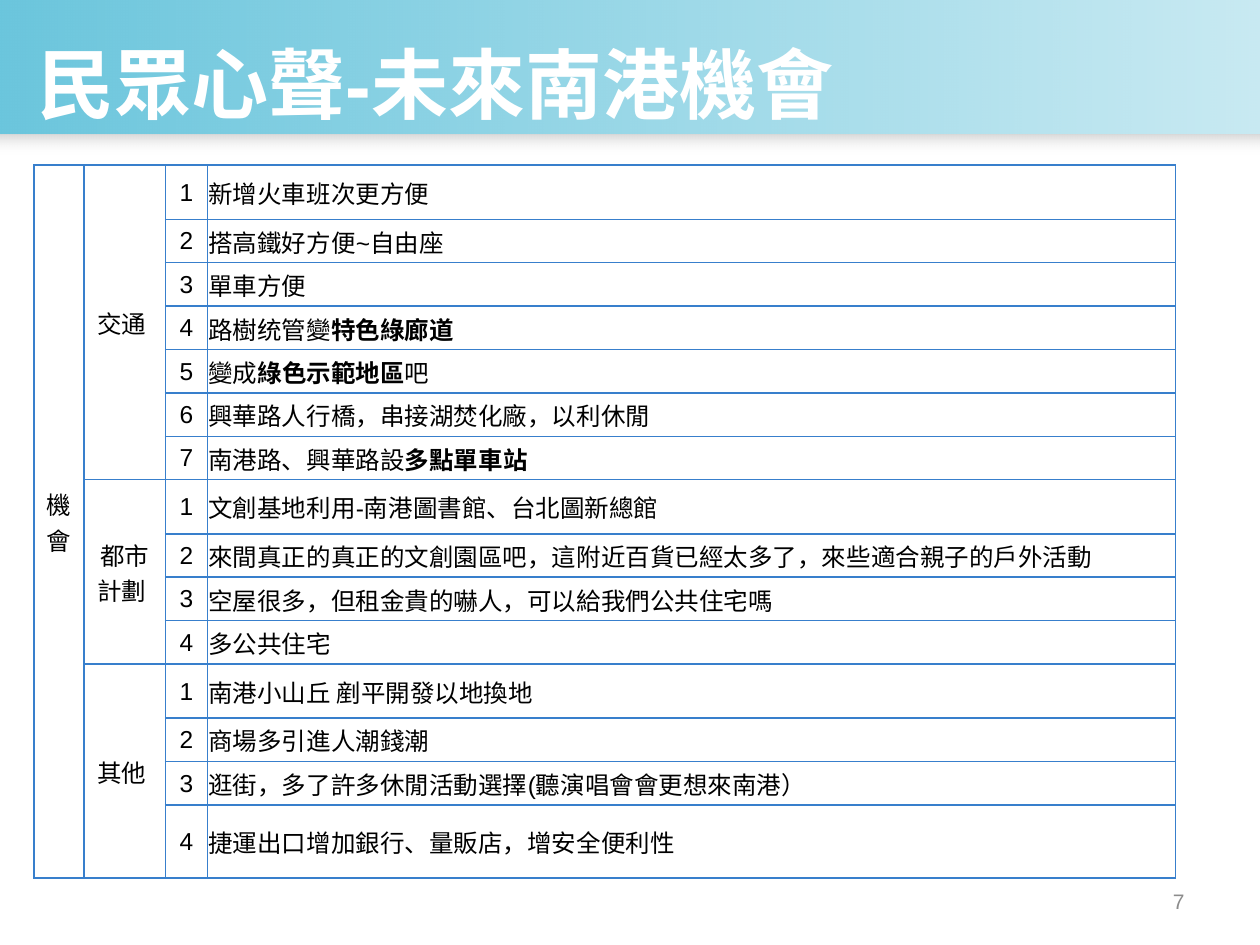
import lxml.etree
import pptx
import pptx.dml.color
import pptx.enum.shapes
import pptx.enum.text
import pptx.oxml.ns
import pptx.util

Cm, Pt = pptx.util.Cm, pptx.util.Pt
RGB = pptx.dml.color.RGBColor.from_string
ALIGN = pptx.enum.text.PP_ALIGN
MIDDLE = pptx.enum.text.MSO_ANCHOR.MIDDLE
qn = pptx.oxml.ns.qn

COLORS = {"banner": "6BC6DD", "white": "FFFFFF", "shade": "D9D9D9",
          "border": "387FCC", "text": "000000", "number": "8C8C8C"}

# Text between asterisks is bold
GROUPS = [
    ("交通 ", ["新增火車班次更方便", "搭高鐵好方便~自由座", "單車方便",
             "路樹统管變*特色綠廊道*", "變成*綠色示範地區*吧",
             "興華路人行橋，串接湖焚化廠，以利休閒",
             "南港路、興華路設*多點單車站*"]),
    ("都市\n計劃 ", ["文創基地利用-南港圖書館、台北圖新總館",
                 "來間真正的真正的文創園區吧，這附近百貨已經太多了，來些適合親子的戶外活動",
                 "空屋很多，但租金貴的嚇人，可以給我們公共住宅嗎", "多公共住宅"]),
    ("其他 ", ["南港小山丘 剷平開發以地換地", "商場多引進人潮錢潮",
             "逛街，多了許多休閒活動選擇(聽演唱會會更想來南港）",
             "捷運出口增加銀行、量販店，增安全便利性"]),
]
COL_WIDTHS = [1, 1.65, 0.84, 19.52]
ROW_HEIGHT, GROUP_TOP_HEIGHT, LAST_HEIGHT = 0.875, 1.09, 1.47


def write(tf, text, size, color, align, bold=False):
    """Fill a text frame: one paragraph per line, asterisks toggle bold."""
    for i, line in enumerate(text.split("\n")):
        p = tf.add_paragraph() if i else tf.paragraphs[0]
        p.alignment = align
        for j, part in enumerate(line.split("*")):
            if part:
                r = p.add_run()
                r.text = part
                r.font.color.rgb = RGB(COLORS[color])
                style = {"name": "Arial", "size": Pt(size), "bold": bold or j % 2 == 1}
                for key, value in style.items():
                    setattr(r.font, key, value)


def add_border(cell):
    tcPr = cell._tc.get_or_add_tcPr()
    for i, side in enumerate(("lnL", "lnR", "lnT", "lnB")):
        ln = lxml.etree.Element(qn("a:" + side), w=str(Pt(1)))
        fill = lxml.etree.SubElement(ln, qn("a:solidFill"))
        lxml.etree.SubElement(fill, qn("a:srgbClr"), val=COLORS["border"])
        tcPr.insert(i, ln)


prs = pptx.Presentation()
prs.slide_width, prs.slide_height = Cm(25.4), Cm(19.05)
s = prs.slides.add_slide(prs.slide_layouts[6])

# Banner and the soft shade under it: top, height, angle, end colour, end opacity
for top, height, angle, start, end, opacity in [
        (0, 2.72, 0, "banner", "banner", 37),
        (2.72, 0.4, 270, "shade", "white", 0)]:
    sp = s.shapes.add_shape(pptx.enum.shapes.MSO_SHAPE.RECTANGLE,
                            0, Cm(top), prs.slide_width, Cm(height))
    sp.shadow.inherit = False
    sp.line.fill.background()
    sp.fill.gradient()
    sp.fill.gradient_angle = angle
    for stop, color, position in zip(sp.fill.gradient_stops, (start, end), (0, 1)):
        stop.color.rgb = RGB(COLORS[color])
        stop.position = position
    end_color = sp._element.spPr.findall(".//" + qn("a:srgbClr"))[-1]
    lxml.etree.SubElement(end_color, qn("a:alpha"), val=str(opacity * 1000))

# Title and page number
for box, text, size, color, align, bold in [
        ((0.51, 0.41, 24.2, 2.51), "民眾心聲-未來南港機會", 44, "white", ALIGN.LEFT, True),
        ((18.2, 17.66, 5.93, 1.01), "7", 12, "number", ALIGN.RIGHT, False)]:
    tf = s.shapes.add_textbox(*map(Cm, box)).text_frame
    for key, value in {"word_wrap": True, "vertical_anchor": MIDDLE}.items():
        setattr(tf, key, value)
    write(tf, text, size, color, align, bold)

# Table
row_count = sum(len(items) for _, items in GROUPS)
frame = s.shapes.add_table(row_count, len(COL_WIDTHS), Cm(0.69), Cm(3.33),
                           Cm(sum(COL_WIDTHS)), Cm(14.35))
table = frame.table
table.first_row = table.horz_banding = False
for column, width in zip(table.columns, COL_WIDTHS):
    column.width = Cm(width)
for row in table.rows:
    row.height = Cm(ROW_HEIGHT)
table.rows[row_count - 1].height = Cm(LAST_HEIGHT)

cell_format = {"margin_left": Cm(0.02), "margin_right": Cm(0.02), "margin_top": Cm(0.02),
               "margin_bottom": 0, "vertical_anchor": MIDDLE}
for cell in table.iter_cells():
    for key, value in cell_format.items():
        setattr(cell, key, value)
    cell.fill.background()
    add_border(cell)
    cell.text_frame.paragraphs[0].font.size = Pt(14)

table.cell(0, 0).merge(table.cell(row_count - 1, 0))
write(table.cell(0, 0).text_frame, "機會", 14, "text", ALIGN.CENTER)
first = 0
for name, items in GROUPS:
    table.rows[first].height = Cm(GROUP_TOP_HEIGHT)
    table.cell(first, 1).merge(table.cell(first + len(items) - 1, 1))
    write(table.cell(first, 1).text_frame, name, 14, "text", ALIGN.CENTER)
    for i, item in enumerate(items):
        write(table.cell(first + i, 2).text_frame, str(i + 1), 14, "text", ALIGN.CENTER)
        write(table.cell(first + i, 3).text_frame, item, 14, "text", ALIGN.LEFT)
    first += len(items)

prs.save("out.pptx")
